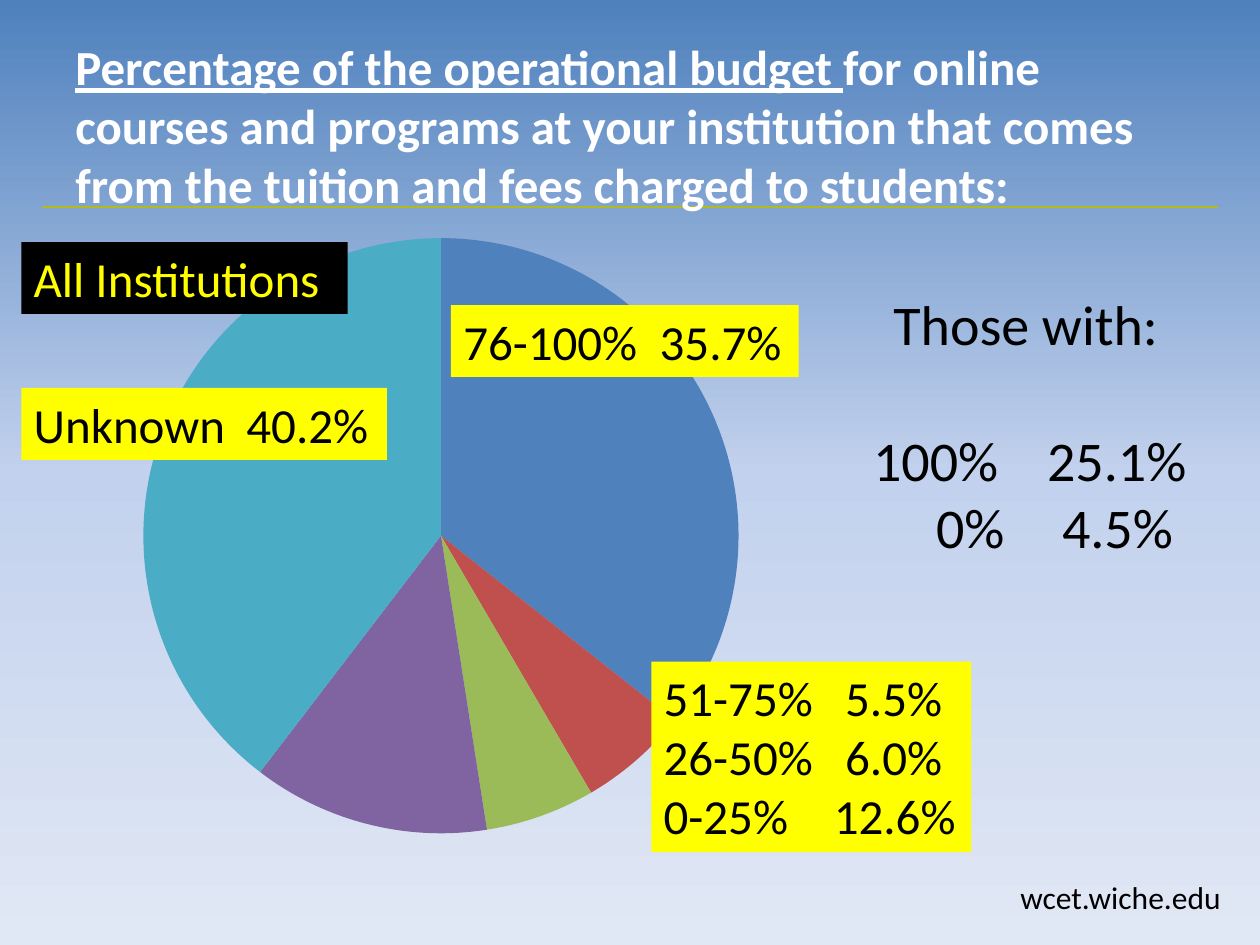
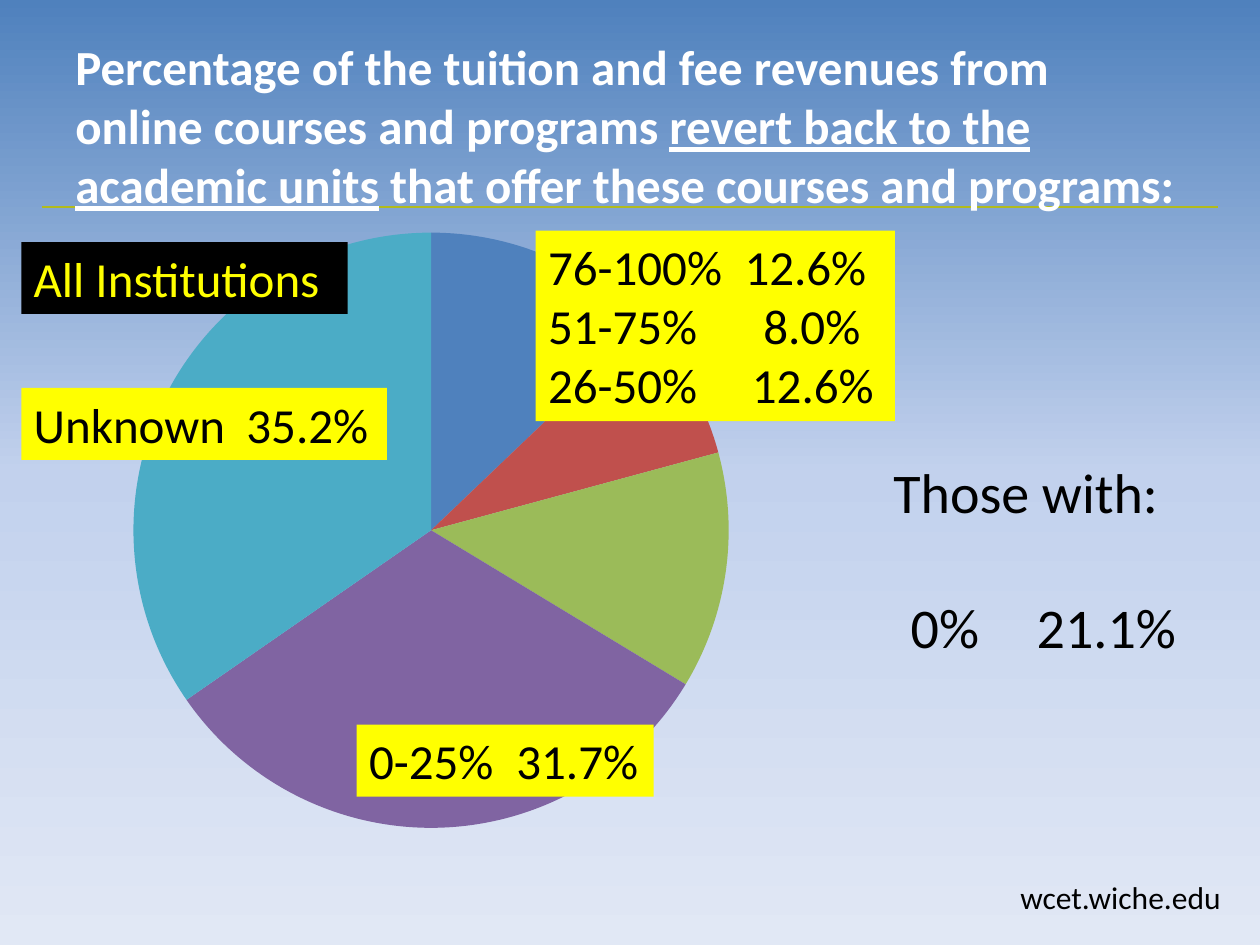
from dataclasses import dataclass, field

from pptx import Presentation
from pptx import util as u
from pptx.chart import data as cd
from pptx.dml import color
from pptx.enum import chart as ch, shapes, text
from pptx.oxml import parse_xml
from pptx.oxml.ns import nsdecls, qn


# Theme
@dataclass(frozen=True)
class Theme:
    font: str = "Calibri"
    black: str = "000000"
    white: str = "FFFFFF"
    yellow: str = "FFFF00"
    rule: str = "B2BB1C"
    background: tuple = ((0, "4F81BD"), (50, "C2D1ED"), (100, "E1E8F5"))
    slices: tuple = ("4F81BD", "C0504D", "9BBB59", "8064A2", "4BACC6")
    title_size: int = 28
    label_size: int = 28
    aside_size: int = 32
    footer_size: int = 18
    chart_size: int = 10


THEME = Theme()


# Content types: every length is in centimetres
@dataclass(frozen=True)
class Box:
    left: float
    top: float
    width: float
    height: float

    def emu(self) -> tuple:
        return tuple(u.Cm(v) for v in (self.left, self.top, self.width, self.height))


@dataclass(frozen=True)
class Row:
    """A name and a share; the share starts at the tab stop."""
    name: str
    share: str = ""
    tab: float = 0
    indent: float = 0
    before: float = 0


@dataclass(frozen=True)
class Label:
    box: Box
    rows: tuple
    fill: str | None = THEME.yellow
    ink: str = THEME.black
    size: int = THEME.label_size


@dataclass(frozen=True)
class Survey:
    title: tuple  # (text, underlined) pairs
    pie: Box
    shares: tuple
    labels: list = field(default_factory=list)


TITLE_BOX = Box(1.27, 1.07, 22.86, 2.9)
FOOTER_BOX = Box(20.32, 17.58, 4.88, 1.02)
RULE_LEFT, RULE_RIGHT, RULE_TOP = 0.84, 24.56, 4.17
LINE_H, TRIPLE_H = 1.45, 3.84


def unknown(share: str) -> Label:
    return Label(Box(0.43, 7.82, 7.37, LINE_H), (Row("Unknown", share, 4.29),))


def those_with(top: float, height: float, *rows: Row) -> Label:
    heading = Row("Those with:", indent=0.41)
    return Label(Box(17.35, top, 8.05, height), (heading, *rows),
                 fill=None, size=THEME.aside_size)


ALL_INSTITUTIONS = Label(Box(0.43, 4.88, 6.58, LINE_H), (Row("All Institutions"),),
                         fill=THEME.black, ink=THEME.yellow)

SURVEYS = (
    Survey(
        (("Percentage of the operational budget ", True),
         ("for online courses and programs at your institution that comes "
          "from the tuition and fees charged to students:", False)),
        Box(2.54, 4.45, 12.7, 12.7), (36, 6, 6, 13, 40),
        [unknown("40.2%"),
         Label(Box(9.09, 6.15, 7.01, LINE_H), (Row("76-100%", "35.7%", 3.96),)),
         those_with(5.72, 5.74,
                    Row("100%", "25.1%", 3.51, before=39),
                    Row("0%", "4.5%", 3.94, indent=1.27)),
         ALL_INSTITUTIONS,
         Label(Box(13.13, 13.34, 6.45, TRIPLE_H),
               (Row("51-75%", "5.5%", 3.66),
                Row("26-50%", "6.0%", 3.66),
                Row("0-25%", "12.6%", 3.43)))]),
    Survey(
        (("Percentage of the tuition and fee revenues from online courses "
          "and programs ", False),
         ("revert back to the academic units", True),
         (" that offer these courses and programs:", False)),
        Box(2.34, 4.24, 12.7, 12.9), (13, 8, 13, 32, 35),
        [unknown("35.2%"),
         Label(Box(7.19, 14.61, 5.99, LINE_H), (Row("0-25%", "31.7%", 2.97),)),
         those_with(9.09, 4.37, Row("0%", "21.1%", 3.15, indent=0.76, before=39)),
         ALL_INSTITUTIONS,
         Label(Box(10.8, 4.65, 7.24, TRIPLE_H),
               (Row("76-100%", "12.6%", 3.96),
                Row("51-75%", "8.0%", 4.34),
                Row("26-50%", "12.6%", 4.11)))]),
)


# Drawing helpers
def rgb(value: str) -> color.RGBColor:
    return color.RGBColor.from_string(value)


def apply(target, formats: dict) -> None:
    for name, value in formats.items():
        setattr(target, name, value)


def style_font(font, size: int, ink: str, **formats) -> None:
    apply(font, {"name": THEME.font, "size": u.Pt(size), **formats})
    font.color.rgb = rgb(ink)


def add_run(p, words: str, size: int, ink: str, **formats) -> None:
    r = p.add_run()
    r.text = words
    style_font(r.font, size, ink, **formats)


def add_box(s, box: Box, fill: str | None = None, **formats):
    """Add a text box, or a filled rectangle, and return its text frame."""
    if fill:
        sp = s.shapes.add_shape(shapes.MSO_SHAPE.RECTANGLE, *box.emu())
        sp.shadow.inherit = False
        sp.fill.solid()
        sp.fill.fore_color.rgb = rgb(fill)
        sp.line.fill.background()
    else:
        sp = s.shapes.add_textbox(*box.emu())
    tf = sp.text_frame
    apply(tf, {"word_wrap": True, "vertical_anchor": text.MSO_ANCHOR.TOP, **formats})
    return tf


def set_stops(p, row: Row) -> None:
    props = p._p.get_or_add_pPr()
    if row.indent:
        props.set("marL", str(u.Cm(row.indent)))
        props.set("indent", "0")
    if row.tab:
        props.append(parse_xml(f'<a:tabLst {nsdecls("a")}>'
                               f'<a:tab pos="{u.Cm(row.tab)}" algn="l"/></a:tabLst>'))


def add_label(s, label: Label) -> None:
    tf = add_box(s, label.box, label.fill)
    for i, row in enumerate(label.rows):
        p = tf.add_paragraph() if i else tf.paragraphs[0]
        set_stops(p, row)
        p.alignment = text.PP_ALIGN.LEFT
        if row.before:
            p.space_before = u.Pt(row.before)
        words = f"{row.name}\t{row.share}" if row.share else row.name
        add_run(p, words, label.size, label.ink)


def add_pie(s, survey: Survey) -> None:
    data = cd.CategoryChartData()
    data.categories = [str(i + 1) for i in range(len(survey.shares))]
    data.add_series("Series 1", survey.shares)
    pie = s.shapes.add_chart(ch.XL_CHART_TYPE.PIE, *survey.pie.emu(), data).chart
    apply(pie, {"has_legend": False, "has_title": False})
    style_font(pie.font, THEME.chart_size, THEME.black)
    plot = pie.plots[0]
    plot.vary_by_categories = True
    for i, shade in enumerate(THEME.slices):
        fill = plot.series[0].points[i].format.fill
        fill.solid()
        fill.fore_color.rgb = rgb(shade)


# Shared parts
def set_background(prs) -> None:
    master = prs.slide_master
    master.background.fill.gradient()
    grad = master.element.find(".//" + qn("a:gradFill"))
    for child in list(grad):
        grad.remove(child)
    stops = "".join(f'<a:gs pos="{pos * 1000}"><a:srgbClr val="{shade}"/></a:gs>'
                    for pos, shade in THEME.background)
    grad.append(parse_xml(f'<a:gsLst {nsdecls("a")}>{stops}</a:gsLst>'))
    grad.append(parse_xml(f'<a:lin {nsdecls("a")} ang="5400000" scaled="0"/>'))


def add_frame(s) -> None:
    rule = s.shapes.add_connector(
        shapes.MSO_CONNECTOR.STRAIGHT, u.Cm(RULE_LEFT), u.Cm(RULE_TOP),
        u.Cm(RULE_RIGHT), u.Cm(RULE_TOP))
    rule.line.color.rgb = rgb(THEME.rule)
    rule.line.width = u.Pt(1.5)
    rule._element.spPr.append(parse_xml(f'<a:effectLst {nsdecls("a")}/>'))
    footer = add_box(s, FOOTER_BOX)
    add_run(footer.paragraphs[0], "wcet.wiche.edu", THEME.footer_size, THEME.black)


def add_title(s, parts: tuple) -> None:
    tf = add_box(s, TITLE_BOX, vertical_anchor=text.MSO_ANCHOR.MIDDLE)
    for words, underlined in parts:
        add_run(tf.paragraphs[0], words, THEME.title_size, THEME.white,
                bold=True, underline=underlined)


def main() -> None:
    prs = Presentation()
    apply(prs, {"slide_width": u.Cm(25.4), "slide_height": u.Cm(19.05)})
    set_background(prs)
    for survey in SURVEYS:
        s = prs.slides.add_slide(prs.slide_layouts[6])
        add_frame(s)
        add_pie(s, survey)
        add_title(s, survey.title)
        for label in survey.labels:
            add_label(s, label)
    prs.save("out.pptx")


if __name__ == "__main__":
    main()
